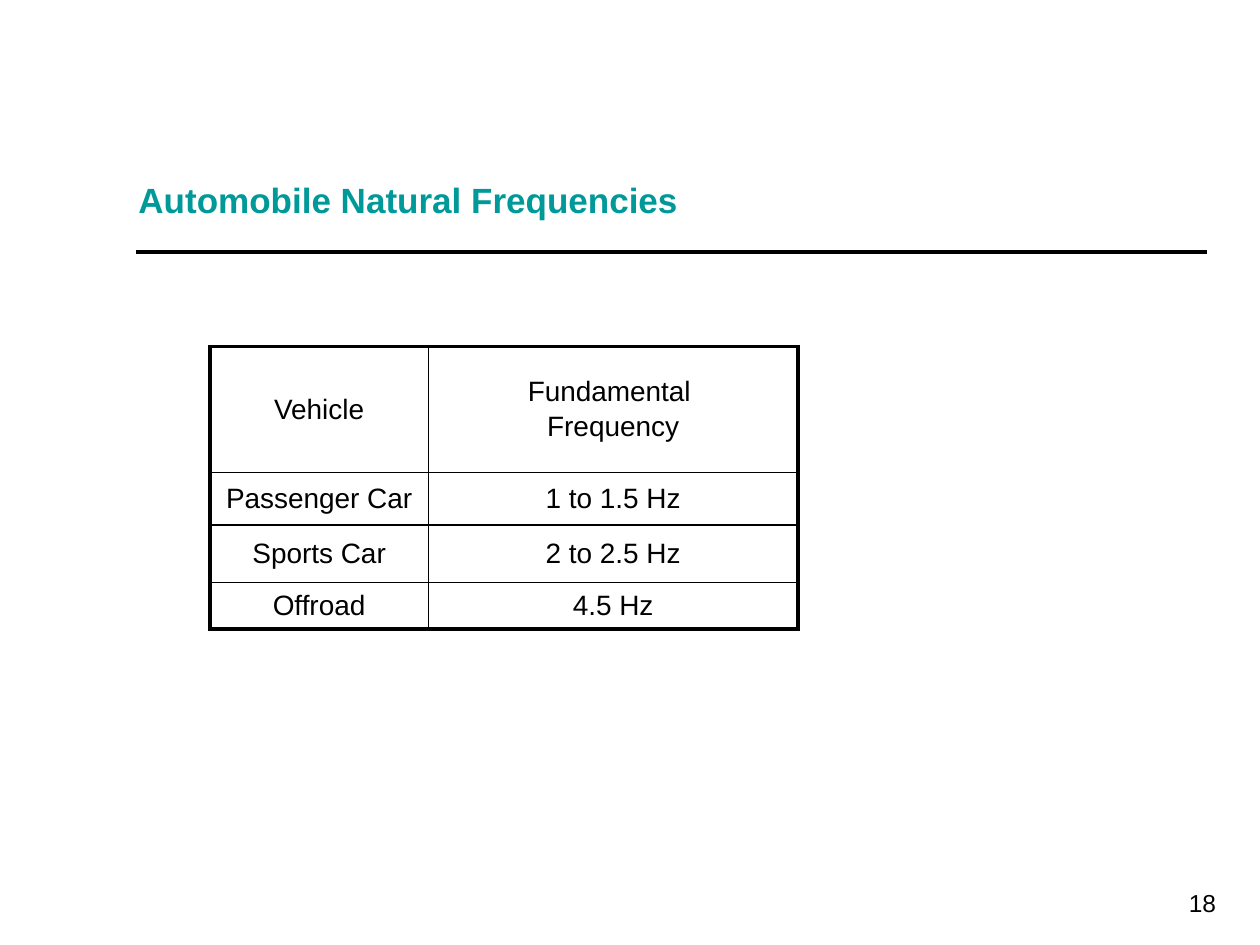
from lxml import etree
from pptx import Presentation
from pptx.dml.color import RGBColor
from pptx.enum import shapes, text
from pptx.oxml import ns
from pptx.util import Pt

COLORS = {"title": "009999", "body": "010000", "line": "000000"}
LEFT, CENTER, RIGHT = text.PP_ALIGN.LEFT, text.PP_ALIGN.CENTER, text.PP_ALIGN.RIGHT
MIDDLE = text.MSO_ANCHOR.MIDDLE

# text, (left, top, width, height), size, bold, color, alignment, line spacing
TEXT_BOXES = [
    ("Automobile Natural Frequencies", (72, 66, 624, 102), 20, True, "title", LEFT, 0.7),
    ("18", (552, 498, 150, 36), 14, False, "body", RIGHT, 1),
]
RULE = (78, 690, 144)  # left, right, y
VEHICLES = [
    ("Vehicle", "Fundamental \nFrequency"),
    ("Passenger Car", "1 to 1.5 Hz"),
    ("Sports Car", "2 to 2.5 Hz"),
    ("Offroad", "4.5 Hz"),
]
TABLE_LEFT, TABLE_TOP = 120, 198
COLUMN_WIDTHS = [124.8, 211.2]
ROW_HEIGHTS = [72, 30, 33, 25]
OUTER_BORDER, INNER_BORDER = 2.25, 1


def style(paragraph, size, bold, color, alignment):
    paragraph.alignment = alignment
    paragraph.font.name = "Arial"
    paragraph.font.size = Pt(size)
    paragraph.font.bold = bold
    paragraph.font.color.rgb = RGBColor.from_string(COLORS[color])


def add_text(slide, content, box, size, bold, color, alignment, spacing):
    frame = slide.shapes.add_textbox(*map(Pt, box)).text_frame
    frame.word_wrap = True
    frame.vertical_anchor = MIDDLE
    frame.text = content
    paragraph = frame.paragraphs[0]
    paragraph.line_spacing = spacing
    style(paragraph, size, bold, color, alignment)


def add_rule(slide):
    left, right, y = map(Pt, RULE)
    rule = slide.shapes.add_connector(shapes.MSO_CONNECTOR.STRAIGHT, left, y, right, y)
    rule.line.width = Pt(2.25)
    rule.line.color.rgb = RGBColor.from_string(COLORS["line"])
    etree.SubElement(rule._element.spPr, ns.qn("a:effectLst"))


def set_borders(cell, outer_sides):
    """Draw all four sides, thicker where outer_sides says so; set before the cell's fill."""
    properties = cell._tc.get_or_add_tcPr()
    for side, is_outer in outer_sides.items():
        width = Pt(OUTER_BORDER if is_outer else INNER_BORDER)
        border = etree.SubElement(properties, ns.qn(f"a:ln{side}"), w=str(width))
        fill = etree.SubElement(border, ns.qn("a:solidFill"))
        etree.SubElement(fill, ns.qn("a:srgbClr"), val=COLORS["line"])


def add_vehicle_table(slide):
    rows, columns = len(ROW_HEIGHTS), len(COLUMN_WIDTHS)
    table = slide.shapes.add_table(
        rows, columns, Pt(TABLE_LEFT), Pt(TABLE_TOP),
        Pt(sum(COLUMN_WIDTHS)), Pt(sum(ROW_HEIGHTS))).table
    table.first_row = table.horz_banding = False
    for column, width in zip(table.columns, COLUMN_WIDTHS):
        column.width = Pt(width)
    for row, height in zip(table.rows, ROW_HEIGHTS):
        row.height = Pt(height)
    for r, values in enumerate(VEHICLES):
        for c, value in enumerate(values):
            cell = table.cell(r, c)
            cell.text = value
            cell.vertical_anchor = MIDDLE
            for paragraph in cell.text_frame.paragraphs:
                style(paragraph, 16, False, "body", CENTER)
                paragraph.space_before = Pt(2.4)
            set_borders(cell, {"L": c == 0, "R": c == columns - 1,
                               "T": r == 0, "B": r == rows - 1})
            cell.fill.background()


def main():
    presentation = Presentation()
    presentation.slide_width, presentation.slide_height = Pt(720), Pt(540)
    slide = presentation.slides.add_slide(presentation.slide_layouts[6])
    for item in TEXT_BOXES:
        add_text(slide, *item)
    add_rule(slide)
    add_vehicle_table(slide)
    presentation.save("out.pptx")


if __name__ == "__main__":
    main()
